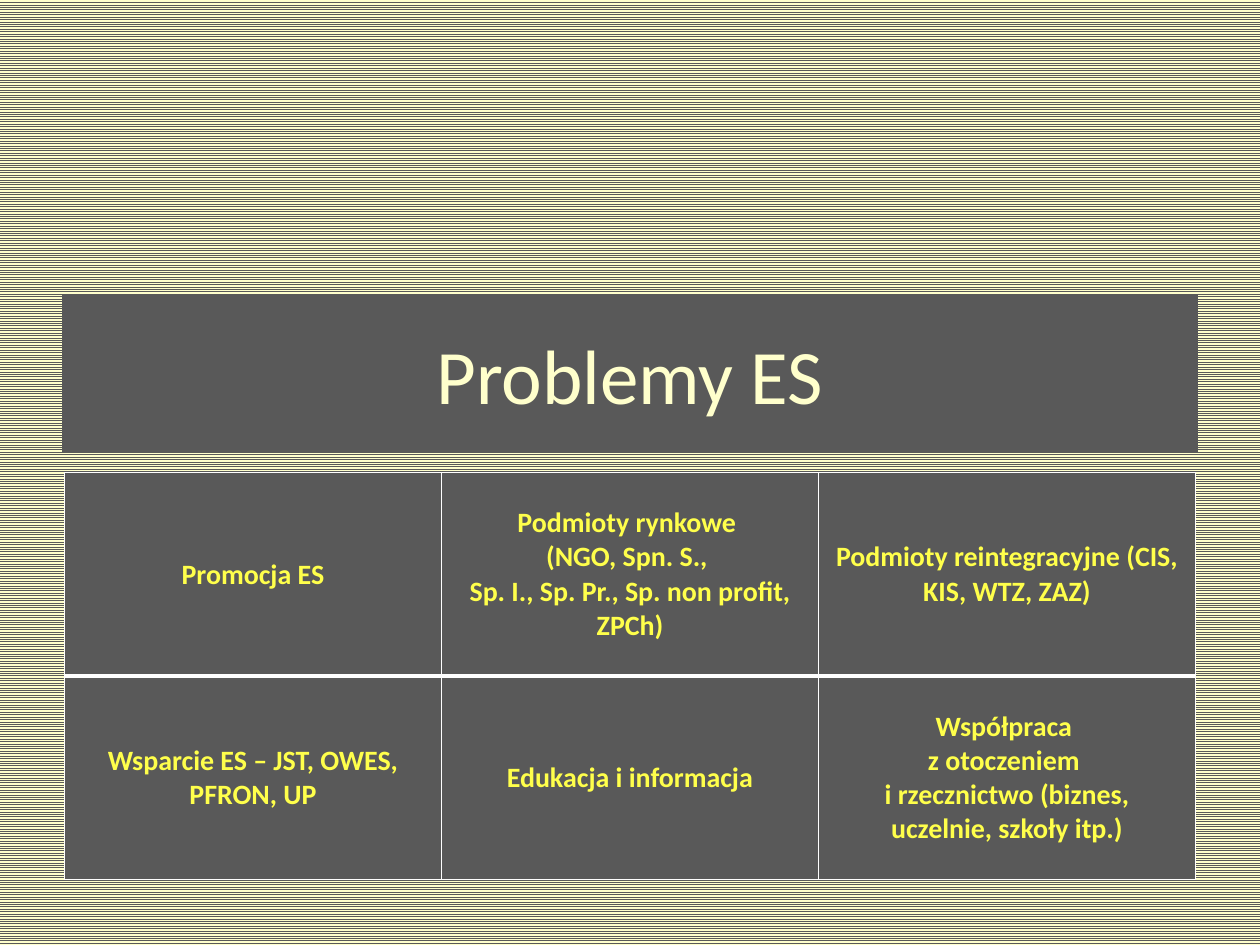
import copy

import lxml.etree
import pptx
import pptx.dml.color
import pptx.enum.dml
import pptx.enum.text
import pptx.oxml.ns
import pptx.util

COLORS = {"gray": "595959", "cream": "FFFFCC", "yellow": "FFFF4B", "white": "FFFFFF"}
TITLE_FONT = {"name": "Calibri", "size": pptx.util.Pt(44), "bold": False}
CELL_FONT = {"name": "Calibri", "size": pptx.util.Pt(16), "bold": True}
PROBLEMS = [
    [
        "Promocja ES",
        "Podmioty rynkowe \v(NGO, Spn. S., \vSp. I., Sp. Pr., Sp. non profit, ZPCh)",
        "Podmioty reintegracyjne (CIS, KIS, WTZ, ZAZ)",
    ],
    [
        "Wsparcie ES – JST, OWES, PFRON, UP",
        "Edukacja i informacja",
        "Współpraca \vz otoczeniem \vi rzecznictwo (biznes, uczelnie, szkoły itp.)",
    ],
]


def color(name):
    return pptx.dml.color.RGBColor.from_string(COLORS[name])


class SlideBuilder:
    def __init__(self, slide):
        self.slide = slide

    def background(self, foreground, back):
        fill = self.slide.background.fill
        fill.patterned()
        fill.pattern = pptx.enum.dml.MSO_PATTERN.LIGHT_HORIZONTAL
        fill.fore_color.rgb = color(foreground)
        fill.back_color.rgb = color(back)

    def centered_text(self, text_frame, text, font_format, color_name):
        text_frame.text = text
        text_frame.word_wrap = True
        paragraph = text_frame.paragraphs[0]
        paragraph.alignment = pptx.enum.text.PP_ALIGN.CENTER
        for run in paragraph.runs:
            for attribute, value in font_format.items():
                setattr(run.font, attribute, value)
            run.font.color.rgb = color(color_name)
        run_properties = paragraph.runs[0].font._element
        for line_break in paragraph._p.findall(pptx.oxml.ns.qn("a:br")):
            line_break.insert(0, copy.deepcopy(run_properties))

    def title(self, text, left, top, width, height):
        shape = self.slide.shapes.title
        place = {"left": left, "top": top, "width": width, "height": height}
        for attribute, value in place.items():
            setattr(shape, attribute, pptx.util.Cm(value))
        shape.fill.solid()
        shape.fill.fore_color.rgb = color("gray")
        shape.line.color.rgb = color("gray")
        shape.line.width = pptx.util.Pt(0.75)
        self.centered_text(shape.text_frame, text, TITLE_FONT, "cream")
        shape.text_frame.vertical_anchor = pptx.enum.text.MSO_ANCHOR.MIDDLE

    def border(self, cell, side, points):
        qn = pptx.oxml.ns.qn
        properties = cell._tc.get_or_add_tcPr()
        line = lxml.etree.SubElement(
            properties, qn("a:ln" + side), w=str(int(pptx.util.Pt(points)))
        )
        fill = lxml.etree.SubElement(line, qn("a:solidFill"))
        lxml.etree.SubElement(fill, qn("a:srgbClr"), val=COLORS["white"])

    def table(self, rows, left, top, width, height):
        place = [pptx.util.Cm(value) for value in (left, top, width, height)]
        table = self.slide.shapes.add_table(len(rows), len(rows[0]), *place).table
        for row_index, row in enumerate(rows):
            top_width = 1 if row_index == 0 else 3
            bottom_width = 1 if row_index == len(rows) - 1 else 3
            widths = {"L": 1, "R": 1, "T": top_width, "B": bottom_width}
            for column_index, text in enumerate(row):
                cell = table.cell(row_index, column_index)
                for side, points in widths.items():
                    self.border(cell, side, points)
                cell.fill.solid()
                cell.fill.fore_color.rgb = color("gray")
                cell.vertical_anchor = pptx.enum.text.MSO_ANCHOR.MIDDLE
                self.centered_text(cell.text_frame, text, CELL_FONT, "yellow")


def main():
    presentation = pptx.Presentation()
    presentation.slide_width = pptx.util.Cm(25.4)
    presentation.slide_height = pptx.util.Cm(19.05)
    builder = SlideBuilder(presentation.slides.add_slide(presentation.slide_layouts[5]))
    builder.background("gray", "cream")
    builder.title("Problemy ES", 1.27, 5.94, 22.86, 3.18)
    builder.table(PROBLEMS, 1.3, 9.53, 22.8, 8.2)
    presentation.save("out.pptx")


if __name__ == "__main__":
    main()
